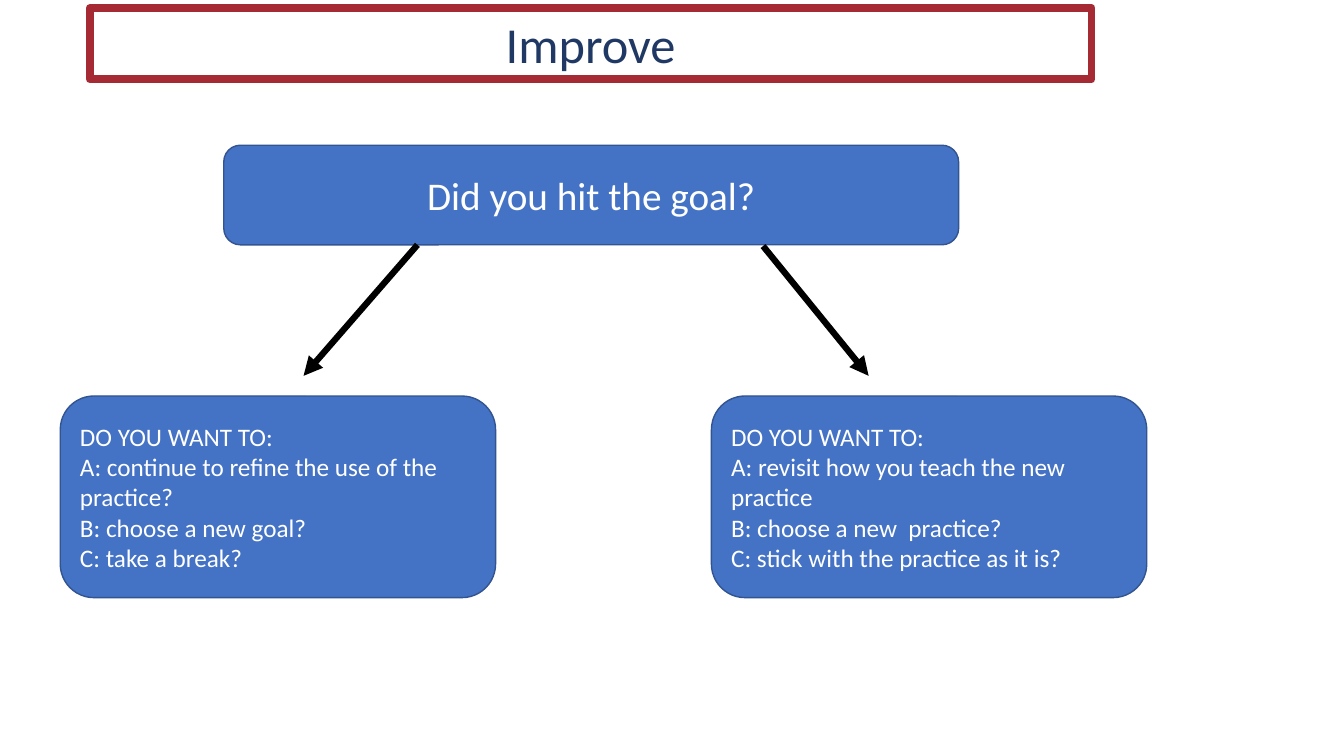
from lxml import etree
from pptx import Presentation
from pptx import util as u
from pptx.dml.color import RGBColor
from pptx.enum import shapes, text
from pptx.oxml.ns import qn


def color(code):
    return RGBColor.from_string(code)


class Board:
    """Holds the style and the current slide."""
    face = "Calibri"
    blue, edge, red = "4472C4", "325491", "A62A33"
    navy, white, black = "203864", "FFFFFF", "000000"

    def __init__(self, slide):
        self.slide = slide

    def line(self, item, code, width):
        item.line.color.rgb = color(code)
        item.line.width = u.Pt(width)

    def label(self, frame, lines, size, code, align):
        frame.word_wrap = True
        frame.vertical_anchor = text.MSO_ANCHOR.MIDDLE
        style = {"name": self.face, "size": u.Pt(size), "bold": False}
        for i, words in enumerate(lines):
            para = frame.paragraphs[0] if i == 0 else frame.add_paragraph()
            para.text = words
            para.alignment = align
            for run in para.runs:
                for key, value in style.items():
                    setattr(run.font, key, value)
                run.font.color.rgb = color(code)

    def title(self, words, *area):
        head = self.slide.shapes.title
        for key, value in zip(("left", "top", "width", "height"), area):
            setattr(head, key, u.Cm(value))
        self.line(head, self.red, 5.5)
        head.text_frame.auto_size = text.MSO_AUTO_SIZE.NONE
        self.label(head.text_frame, [words], 36, self.navy, text.PP_ALIGN.CENTER)

    def box(self, lines, size, align, *area):
        box = self.slide.shapes.add_shape(
            shapes.MSO_SHAPE.ROUNDED_RECTANGLE, *map(u.Cm, area))
        box.shadow.inherit = False
        box.fill.solid()
        box.fill.fore_color.rgb = color(self.blue)
        self.line(box, self.edge, 1)
        self.label(box.text_frame, lines, size, self.white, align)

    def arrow(self, *ends):
        arrow = self.slide.shapes.add_connector(
            shapes.MSO_CONNECTOR.STRAIGHT, *map(u.Cm, ends))
        self.line(arrow, self.black, 4.5)
        props = arrow._element.spPr
        etree.SubElement(props.find(qn("a:ln")), qn("a:tailEnd"), type="triangle")
        etree.SubElement(props, qn("a:effectLst"))


def main():
    deck = Presentation()
    deck.slide_width, deck.slide_height = u.Cm(33.87), u.Cm(19.05)
    board = Board(deck.slides.add_slide(deck.slide_layouts[5]))

    # Title and question
    board.title("Improve", 2.26, 0.2, 25.25, 1.8)
    board.box(["Did you hit the goal?"], 28, text.PP_ALIGN.CENTER,
              5.64, 3.66, 18.52, 2.51)

    # Arrows to the two answers
    board.arrow(10.52, 6.17, 7.65, 9.47)
    board.arrow(19.23, 6.2, 21.89, 9.47)

    # Choices for each answer
    choices = {
        1.52: ["DO YOU WANT TO:\vA: continue to refine the use of the practice?",
               "B: choose a new goal?",
               "C: take a break?"],
        17.93: ["DO YOU WANT TO:\vA: revisit how you teach the new practice",
                "B: choose a new  practice?",
                "C: stick with the practice as it is?"],
    }
    for left, lines in choices.items():
        board.box(lines, 18, text.PP_ALIGN.LEFT, left, 9.98, 10.97, 5.08)

    deck.save("out.pptx")


if __name__ == "__main__":
    main()
